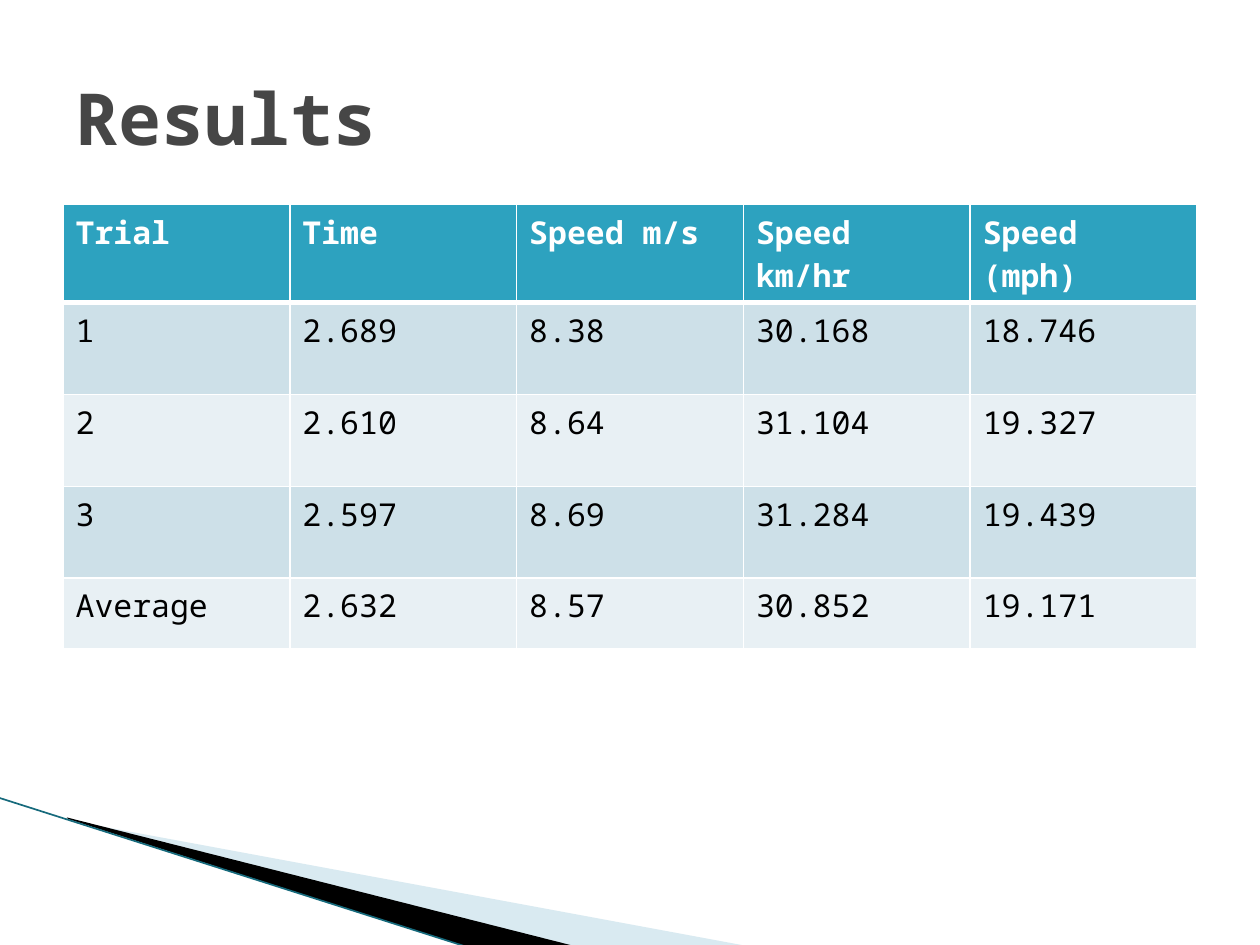
import lxml.etree
import pptx
import pptx.dml.color
import pptx.enum.shapes
import pptx.enum.text
import pptx.oxml.ns
import pptx.util

Cm = pptx.util.Cm
RGBColor = pptx.dml.color.RGBColor
qn = pptx.oxml.ns.qn

FONT = "Noto Sans Mono"
WHITE = RGBColor(0xFF, 0xFF, 0xFF)
BLACK = RGBColor(0x00, 0x00, 0x00)
GRAY = RGBColor(0x46, 0x46, 0x46)
TEAL = RGBColor(0x2D, 0xA2, 0xBF)
DARK_TEAL = RGBColor(0x16, 0x6A, 0x7C)
PALE_BLUE = RGBColor(0xA0, 0xCB, 0xDC)
BANDS = [RGBColor(0xE8, 0xF0, 0xF4), RGBColor(0xCD, 0xE0, 0xE8)]

RESULTS = [
    ["Trial", "Time", "Speed m/s", "Speed km/hr", "Speed (mph)"],
    ["1", "2.689", "8.38", "30.168", "18.746"],
    ["2", "2.610", "8.64", "31.104", "19.327"],
    ["3", "2.597", "8.69", "31.284", "19.439"],
    ["Average", "2.632", "8.57", "30.852", "19.171"],
]


def write_text(frame, text, size=18, color=BLACK, bold=False):
    paragraph = frame.paragraphs[0]
    run = paragraph.add_run()
    run.text = text
    run.font.name = FONT
    run.font.size = pptx.util.Pt(size)
    run.font.bold = bold
    run.font.color.rgb = color


def set_border(cell, side, points):
    properties = cell._tc.get_or_add_tcPr()
    line = lxml.etree.SubElement(properties, qn("a:ln" + side), w=str(pptx.util.Pt(points)))
    fill = lxml.etree.SubElement(line, qn("a:solidFill"))
    lxml.etree.SubElement(fill, qn("a:srgbClr"), val=str(WHITE))


presentation = pptx.Presentation()
presentation.slide_width = Cm(25.4)
presentation.slide_height = Cm(19.05)
slide = presentation.slides.add_slide(presentation.slide_layouts[6])

wedges = [
    ([(1.4, 16.54), (15.11, 19.08), (11.58, 19.08), (1.4, 16.51)], PALE_BLUE, 40),
    ([(1.35, 16.48), (11.61, 19.08), (9.45, 19.1), (1.37, 16.51)], BLACK, 100),
]
for corners, color, opacity in wedges:
    points = [(Cm(x), Cm(y)) for x, y in corners]
    builder = slide.shapes.build_freeform(*points[0])
    builder.add_line_segments(points[1:], close=True)
    wedge = builder.convert_to_shape()
    wedge.shadow.inherit = False
    wedge.line.fill.background()
    wedge.fill.solid()
    wedge.fill.fore_color.rgb = color
    if opacity < 100:
        color_element = wedge._element.spPr.find(qn("a:solidFill"))[0]
        lxml.etree.SubElement(color_element, qn("a:alpha"), val=str(opacity * 1000))

edge = slide.shapes.add_connector(
    pptx.enum.shapes.MSO_CONNECTOR.STRAIGHT, Cm(-0.03), Cm(16.08), Cm(9.45), Cm(19.1)
)
edge.line.color.rgb = DARK_TEAL
edge.line.width = pptx.util.Pt(0.95)
lxml.etree.SubElement(edge._element.spPr, qn("a:effectLst"))

table = slide.shapes.add_table(
    len(RESULTS), len(RESULTS[0]), Cm(1.27), Cm(4.12), Cm(22.86), Cm(8.82)
).table
for row in table.rows:
    row.height = Cm(1.85)
table.rows[len(RESULTS) - 1].height = Cm(1.42)
for row_index, values in enumerate(RESULTS):
    header = row_index == 0
    for column_index, value in enumerate(values):
        cell = table.cell(row_index, column_index)
        for side in "LRTB":
            thick = (header and side == "B") or (row_index == 1 and side == "T")
            set_border(cell, side, 3 if thick else 1)
        cell.fill.solid()
        cell.fill.fore_color.rgb = TEAL if header else BANDS[row_index % 2]
        write_text(cell.text_frame, value, color=WHITE if header else BLACK, bold=header)

title = slide.shapes.add_textbox(Cm(1.27), Cm(0.76), Cm(22.86), Cm(3.18))
title.text_frame.word_wrap = True
title.text_frame.vertical_anchor = pptx.enum.text.MSO_ANCHOR.MIDDLE
write_text(title.text_frame, "Results", size=41, color=GRAY, bold=True)

presentation.save("out.pptx")
